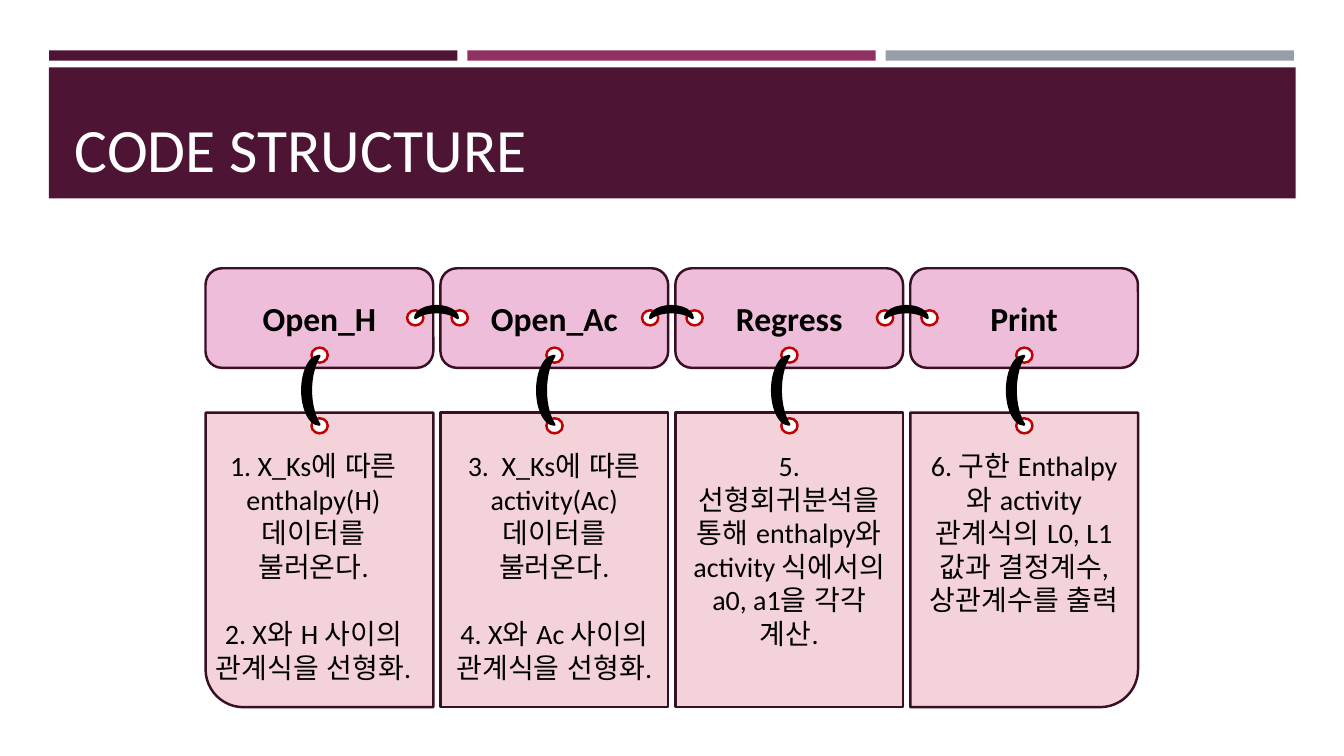
from pptx import Presentation
from pptx.dml.color import RGBColor
from pptx.enum.lang import MSO_LANGUAGE_ID as Lang
from pptx.enum.shapes import MSO_SHAPE as Kind
from pptx.enum.text import MSO_ANCHOR as Anchor, PP_ALIGN as Align
from pptx.util import Cm, Pt

PLUM, EDGE, RED, BLACK, WHITE = "4D1434", "390F26", "C00000", "000000", "FFFFFF"
PINK, ROSE = "EEBDD9", "F3D3D9"


def draw(kind, x, y, w, h, fill, line=None, turn=0):
    """Add a flat preset shape, with lengths in cm."""
    shape = slide.shapes.add_shape(kind, Cm(x), Cm(y), Cm(w), Cm(h))
    shape.shadow.inherit = False
    shape.rotation = turn
    shape.fill.solid()
    shape.fill.fore_color.rgb = RGBColor.from_string(fill)
    if line:
        shape.line.color.rgb = RGBColor.from_string(line)
        shape.line.width = Pt(1.75)
    else:
        shape.line.fill.background()
    return shape


def write(para, text, size, color, align, bold=False):
    """Put one styled run into a paragraph."""
    run = para.add_run()
    run.text = text
    para.alignment = align
    style = {"name": "Calibri", "size": Pt(size), "bold": bold,
             "language_id": Lang.KOREAN}
    for key, value in style.items():
        setattr(run.font, key, value)
    run.font.color.rgb = RGBColor.from_string(color)


deck = Presentation()
deck.slide_width, deck.slide_height = Cm(33.87), Cm(19.05)
slide = deck.slides.add_slide(deck.slide_layouts[5])

# Header: three strips over a title band
for i, color in enumerate([PLUM, "903163", "969FA7"]):
    draw(Kind.RECTANGLE, 1.24 + 10.54 * i, 1.27, 10.29, 0.26, color)
draw(Kind.RECTANGLE, 1.23, 1.7, 31.42, 3.3, PLUM)

title = slide.shapes.title
place = {"left": 1.63, "top": 1.96, "width": 30.63, "height": 2.82}
for key, value in place.items():
    setattr(title, key, Cm(value))
title.text_frame.vertical_anchor = Anchor.BOTTOM
write(title.text_frame.paragraphs[0], "CODE STRUCTURE", 44, WHITE, Align.LEFT)
slide.shapes.element.append(title.element)  # bring in front of the band

# Steps: heading, card shape, card turn, card texts
steps = [
    ("Open_H", Kind.ROUND_1_RECTANGLE, 180,
     ["1. X_Ks에 따른 enthalpy(H) 데이터를 불러온다.",
      "2. X와 H 사이의 관계식을 선형화."]),
    ("Open_Ac", Kind.RECTANGLE, 0,
     ["3.  X_Ks에 따른 activity(Ac) 데이터를 불러온다.",
      "4. X와 Ac 사이의 관계식을 선형화."]),
    ("Regress", Kind.RECTANGLE, 0,
     ["5. 선형회귀분석을 통해 enthalpy와 activity 식에서의 a0, a1을 각각 계산."]),
    ("Print", Kind.ROUND_1_RECTANGLE, 90,
     ["6. 구한 Enthalpy와 activity 관계식의 L0, L1 값과 결정계수, "
      "상관계수를 출력"]),
]
wide, tall, top = 5.74, 7.42, 10.4
lefts = [5.18 + 5.92 * i for i in range(len(steps))]

for x, (name, kind, turn, texts) in zip(lefts, steps):
    # A quarter turn swaps the sides around the same centre
    w, h = (tall, wide) if turn == 90 else (wide, tall)
    draw(kind, x + (wide - w) / 2, top + (tall - h) / 2, w, h, ROSE, EDGE, turn)

    head = draw(Kind.ROUNDED_RECTANGLE, x, 6.76, wide, 2.51, PINK, EDGE)
    head.text_frame.vertical_anchor = Anchor.MIDDLE
    write(head.text_frame.paragraphs[0], name, 24, BLACK, Align.CENTER, True)

    shift = -0.15 if x == lefts[0] else 0
    box = slide.shapes.add_textbox(Cm(x + shift), Cm(top), Cm(wide), Cm(6.5))
    frame = box.text_frame
    frame.word_wrap = True
    frame.margin_top = Cm(0.9)
    for i, text in enumerate(texts):
        para = frame.add_paragraph() if i else frame.paragraphs[0]
        para.space_before = Pt(24 * i)
        write(para, text, 20, BLACK, Align.CENTER)

# Rings and the hooks that tie heads to cards and to each other
for x in lefts:
    spots = [(2.67, 8.76), (2.67, 10.54)]
    hooks = [(2.44, 8.97, 0.43, 1.73, 0)]
    if x != lefts[-1]:
        spots += [(5.08, 7.82), (6.2, 7.82)]
        hooks += [(5.67, 7.33, 0.3, 1.07, 90)]
    for dx, y in spots:
        draw(Kind.OVAL, x + dx, y, 0.41, 0.38, WHITE, RED)
    for dx, y, w, h, turn in hooks:
        draw(Kind.MOON, x + dx, y, w, h, BLACK, BLACK, turn)

deck.save("out.pptx")
